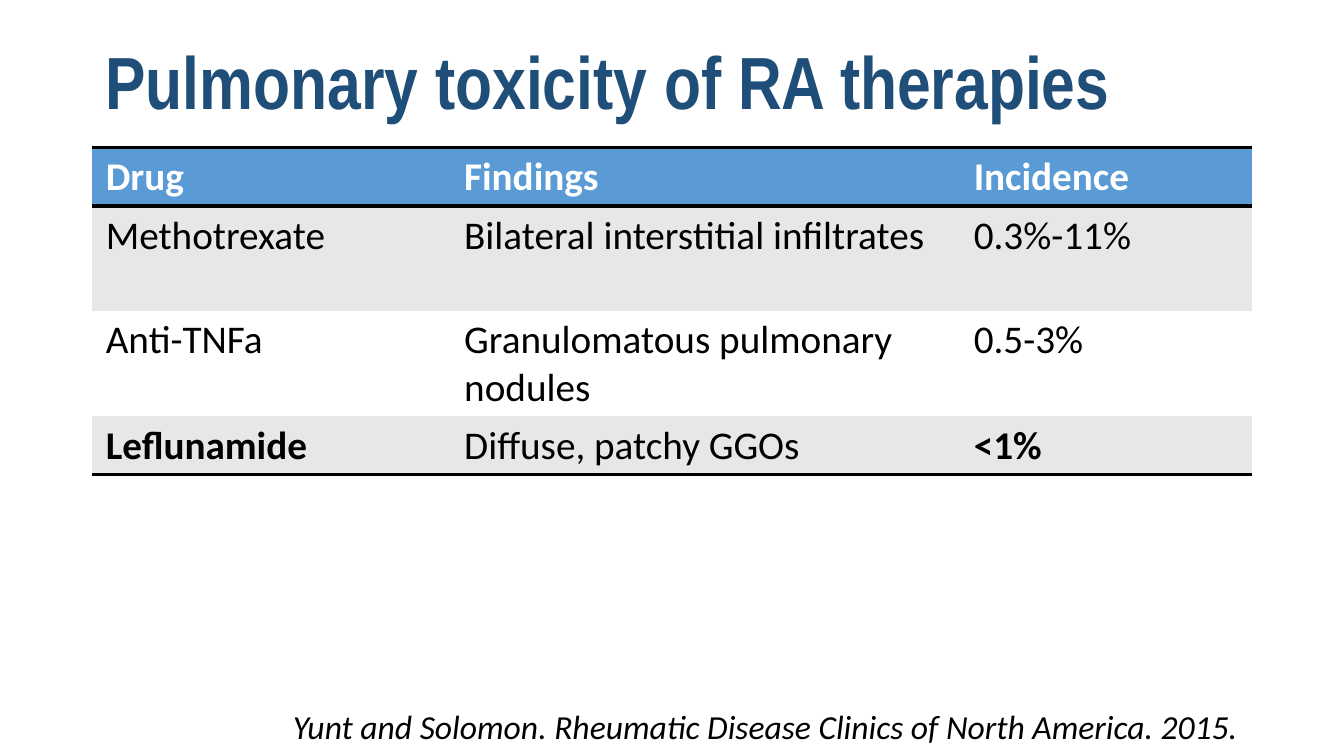
"""Build a slide with a table of the pulmonary toxicity of RA therapies."""
from lxml import etree
from pptx import Presentation
from pptx.dml.color import RGBColor
from pptx.enum import text
from pptx.oxml import ns
from pptx.util import Pt


def style(paragraph, size, color, font="Calibri", bold=False, italic=False):
    paragraph.font.name = font
    paragraph.font.size = Pt(size)
    paragraph.font.bold = bold
    paragraph.font.italic = italic
    paragraph.font.color.rgb = RGBColor.from_string(color)


def rule(cell, side):
    line = etree.Element(ns.qn(f"a:{side}"), w=str(Pt(2)))
    fill = etree.SubElement(line, ns.qn("a:solidFill"))
    etree.SubElement(fill, ns.qn("a:srgbClr"), val="000000")
    properties = cell._tc.get_or_add_tcPr()
    properties.insert(len(properties) - 1, line)


presentation = Presentation()
presentation.slide_width, presentation.slide_height = Pt(720), Pt(405)
slide = presentation.slides.add_slide(presentation.slide_layouts[6])

left, width = 49.5, 621
heading = slide.shapes.add_textbox(Pt(left), Pt(21.6), Pt(width), Pt(48.2)).text_frame
heading.word_wrap = True
heading.vertical_anchor = text.MSO_ANCHOR.MIDDLE
heading.text = "Pulmonary toxicity of RA therapies"
heading.paragraphs[0].line_spacing = 0.9
style(heading.paragraphs[0], 39.6, "1F4E79", "Arial Narrow", bold=True)

therapies = [
    ("Drug", "Findings", "Incidence"),
    ("Methotrexate", "Bilateral interstitial infiltrates", "0.3%-11%"),
    ("Anti-TNFa", "Granulomatous pulmonary nodules", "0.5-3%"),
    ("Leflunamide", "Diffuse, patchy GGOs", "<1%"),
]
row_heights = [30.2, 56.2, 56.2, 30.2]
row_fills = ["5B9BD5", "E7E7E7", "FFFFFF", "E7E7E7"]
row_rules = [("lnT", "lnB"), (), (), ("lnB",)]
bold_columns = [(0, 1, 2), (), (), (0, 2)]

toxicity = slide.shapes.add_table(
    4, 3, Pt(left), Pt(79.2), Pt(width), Pt(sum(row_heights))
).table
no_style = "{2D5ABB26-0587-4C30-8999-92F81FD0307C}"
toxicity._tbl.tblPr.find(ns.qn("a:tableStyleId")).text = no_style
for column, column_width in zip(toxicity.columns, (192, 273, 156)):
    column.width = Pt(column_width)

for r, therapy in enumerate(therapies):
    toxicity.rows[r].height = Pt(row_heights[r])
    for c, entry in enumerate(therapy):
        cell = toxicity.cell(r, c)
        cell.text = entry
        cell.margin_top = cell.margin_bottom = Pt(3)
        cell.fill.solid()
        cell.fill.fore_color.rgb = RGBColor.from_string(row_fills[r])
        for side in row_rules[r]:
            rule(cell, side)
        color = "000000" if r else "FFFFFF"
        style(cell.text_frame.paragraphs[0], 21, color, bold=c in bold_columns[r])

citation = slide.shapes.add_textbox(Pt(144), Pt(374.4), Pt(526.5), Pt(29)).text_frame
citation.word_wrap = False
citation.auto_size = text.MSO_AUTO_SIZE.SHAPE_TO_FIT_TEXT
citation.text = "Yunt and Solomon. Rheumatic Disease Clinics of North America. 2015."
citation.paragraphs[0].alignment = text.PP_ALIGN.RIGHT
style(citation.paragraphs[0], 18, "000000", italic=True)

presentation.save("out.pptx")
